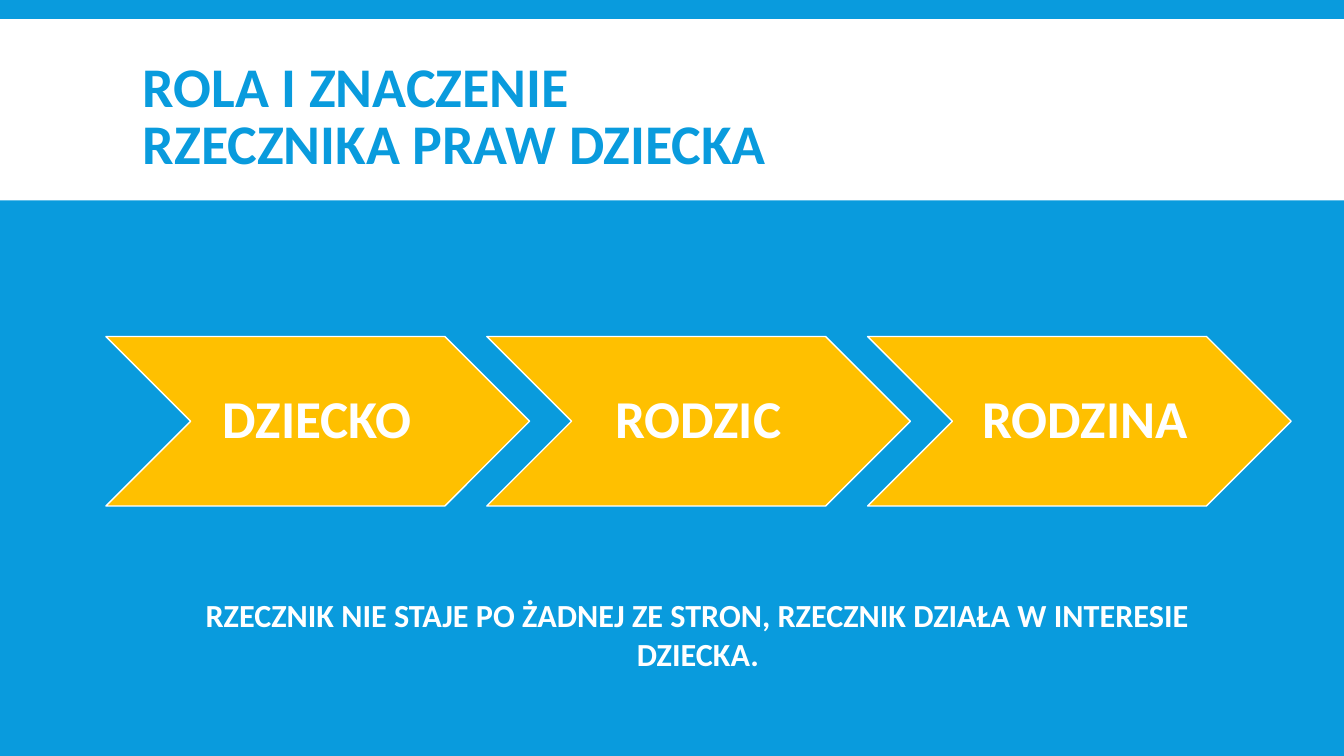
import dataclasses

import pptx
import pptx.dml.color
import pptx.enum.shapes
import pptx.enum.text
import pptx.util

Cm = pptx.util.Cm
Pt = pptx.util.Pt
Color = pptx.dml.color.RGBColor
Align = pptx.enum.text.PP_ALIGN
Anchor = pptx.enum.text.MSO_ANCHOR
Preset = pptx.enum.shapes.MSO_SHAPE


@dataclasses.dataclass(frozen=True)
class Theme:
    """Colours, font and type sizes of the slide."""

    blue: Color = Color(0x09, 0x9B, 0xDD)
    white: Color = Color(0xFF, 0xFF, 0xFF)
    amber: Color = Color(0xFF, 0xC0, 0x00)
    font: str = "Calibri"
    title_size: int = 40
    step_size: int = 38
    closing_size: int = 23


@dataclasses.dataclass(frozen=True)
class Box:
    """A rectangle in centimetres."""

    left: float
    top: float
    width: float
    height: float

    def lengths(self):
        """Return the four lengths in the order python-pptx expects."""
        return [Cm(value) for value in (self.left, self.top, self.width, self.height)]


THEME = Theme()
WIDTH, HEIGHT = 33.87, 19.05


def add_shape(slide, preset, box, fill):
    """Add a flat, filled preset shape without outline."""
    shape = slide.shapes.add_shape(preset, *box.lengths())
    shape.shadow.inherit = False
    shape.fill.solid()
    shape.fill.fore_color.rgb = fill
    shape.line.fill.background()
    return shape


def write(shape, lines, size, color, align, anchor, insets=(0.25, 0.13, 0.25, 0.13)):
    """Write pairs of text and line spacing as bold paragraphs."""
    frame = shape.text_frame
    frame.word_wrap = True
    frame.vertical_anchor = anchor
    (frame.margin_left, frame.margin_top,
     frame.margin_right, frame.margin_bottom) = [Cm(inset) for inset in insets]
    for index, (text, spacing) in enumerate(lines):
        paragraph = frame.add_paragraph() if index else frame.paragraphs[0]
        paragraph.alignment = align
        paragraph.line_spacing = spacing
        run = paragraph.add_run()
        run.text = text
        run.font.name = THEME.font
        run.font.size = Pt(size)
        run.font.bold = True
        run.font.color.rgb = color


def add_header(slide, box):
    """Add the white band and the two-line title on it."""
    add_shape(slide, Preset.RECTANGLE, box, THEME.white)
    title_box = Box(box.left + 3.35, box.top + 0.3, 27.18, 4.19)
    title = slide.shapes.add_textbox(*title_box.lengths())
    lines = [("ROLA I ZNACZENIE", 1.0), ("RZECZNIKA PRAW DZIECKA", 0.85)]
    write(title, lines, THEME.title_size, THEME.blue, Align.LEFT, Anchor.MIDDLE)


def add_chevrons(slide, box, labels):
    """Spread overlapping chevrons evenly across the box."""
    chevron_width = box.height * 2.5
    step = (box.width - chevron_width) / (len(labels) - 1)
    for index, label in enumerate(labels):
        chevron_box = Box(box.left + index * step, box.top, chevron_width, box.height)
        chevron = add_shape(slide, Preset.CHEVRON, chevron_box, THEME.amber)
        chevron.adjustments[0] = 0.5
        chevron.line.color.rgb = THEME.white
        chevron.line.width = Pt(1)
        write(chevron, [(label, 0.9)], THEME.step_size, THEME.white,
              Align.CENTER, Anchor.MIDDLE, (0.43, 0.15, 0.15, 0.15))


def add_closing(slide, box):
    """Add the closing statement."""
    closing = slide.shapes.add_textbox(*box.lengths())
    text = "RZECZNIK NIE STAJE PO ŻADNEJ ZE STRON, RZECZNIK DZIAŁA W INTERESIE DZIECKA."
    write(closing, [(text, 1.0)], THEME.closing_size, THEME.white, Align.CENTER, Anchor.TOP)


def main():
    """Build and save the presentation."""
    presentation = pptx.Presentation()
    presentation.slide_width = Cm(WIDTH)
    presentation.slide_height = Cm(HEIGHT)
    slide = presentation.slides.add_slide(presentation.slide_layouts[6])
    slide.background.fill.solid()
    slide.background.fill.fore_color.rgb = THEME.blue
    add_header(slide, Box(0, 0.48, WIDTH, 4.57))
    add_chevrons(slide, Box(2.67, 8.48, 29.87, 4.27), ["DZIECKO ", "RODZIC ", "RODZINA"])
    add_closing(slide, Box(4.14, 14.88, 26.9, 2.18))
    presentation.save("out.pptx")


if __name__ == "__main__":
    main()
